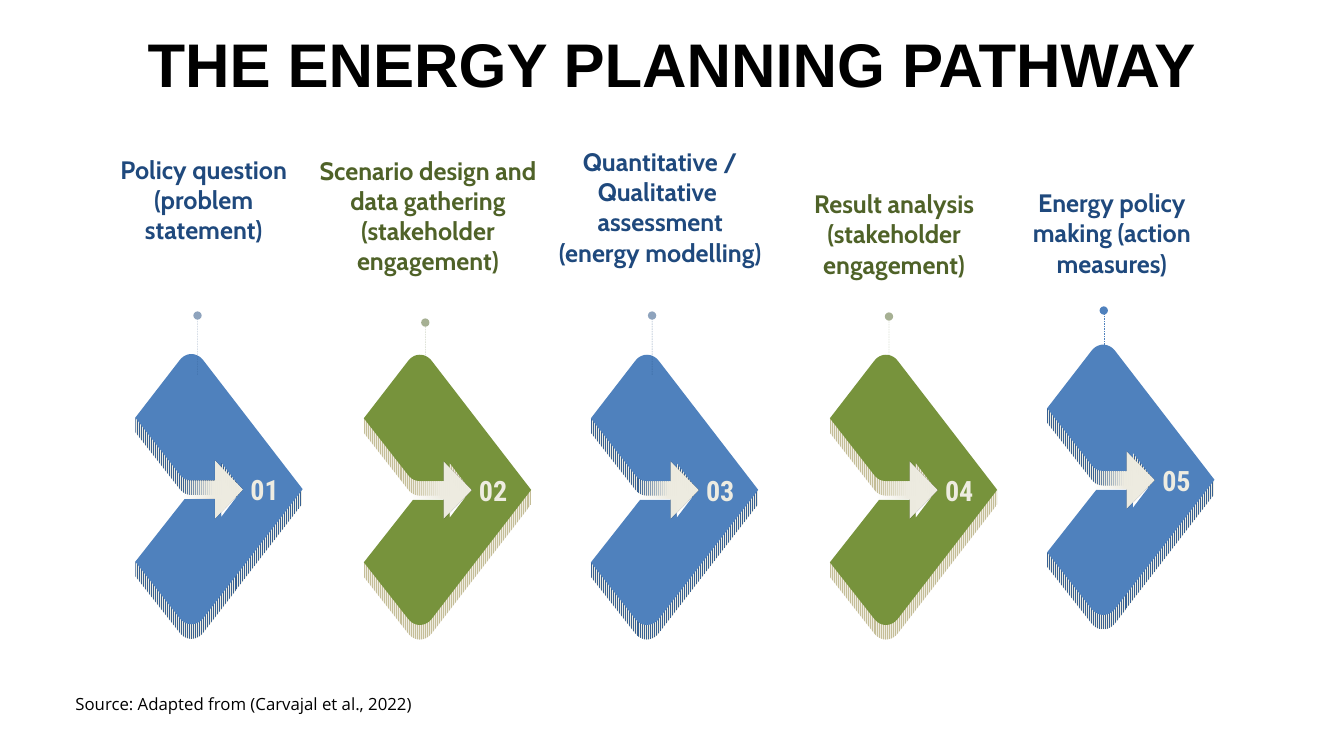
"""Builds the energy planning pathway slide: five numbered chevrons with labels."""
from copy import deepcopy
from dataclasses import dataclass

from lxml import etree
from pptx import Presentation
from pptx.dml import color as dml
from pptx.enum import dml as styles, shapes, text
from pptx.oxml import ns
from pptx.slide import Slide
from pptx.util import Pt

COLOURS = {
    "black": "000000",
    "cream": "EEECE1",
    "blue": "4F81BD",
    "blue side": "376092",
    "navy": "1F497D",
    "green": "77933C",
    "green side": "C4BD97",
    "olive": "4F6228",
}
DEPTH = 10.4
CURVE_STEPS = 8
Segment = tuple[float, ...]
Box = tuple[float, float, float, float]


@dataclass(frozen=True)
class Palette:
    face: str
    side: str
    label: str


@dataclass(frozen=True)
class Leader:
    x: float
    start: float
    end: float
    colour: str
    opacity: int = 50


@dataclass(frozen=True)
class Step:
    label: str
    left: float
    top: float
    label_box: Box
    palette: Palette
    leader: Leader


BLUE = Palette("blue", "blue side", "navy")
GREEN = Palette("green", "green side", "olive")
STEPS = [
    Step("Policy question (problem statement)", 96.7, 252.9,
         (81.4, 110.2, 128.2, 27.4), BLUE, Leader(141.1, 267.8, 225.4, "navy")),
    Step("Scenario design and data gathering (stakeholder engagement)", 259.9, 253.4,
         (219.6, 110.6, 172.1, 27.4), GREEN, Leader(303.8, 255.6, 230.4, "olive")),
    Step("Quantitative / Qualitative  assessment (energy modelling)", 422.1, 253.4,
         (396, 104.4, 151.2, 28.8), BLUE, Leader(465.8, 267.8, 225.4, "navy")),
    Step("Result analysis (stakeholder engagement)", 592.8, 253.4,
         (554.4, 134.6, 168.5, 24.5), GREEN, Leader(635, 255.6, 226.1, "olive")),
    Step("Energy policy making (action measures)", 748, 246.2,
         (725.8, 133.9, 136.8, 32.4), BLUE, Leader(788.4, 264.2, 221.8, "blue", 100)),
]


def rgb(name: str) -> dml.RGBColor:
    """Return a named colour."""
    return dml.RGBColor.from_string(COLOURS[name])


def chevron(depth: float) -> list[Segment]:
    """Return the chevron outline, with upright edges when it has depth."""
    tip: list[Segment] = [(119.5, 96.5)]
    lower: list[Segment] = [(0, 148.3)]
    upper: list[Segment] = [(0, 45.4)]
    if depth:
        tip = [(112, 96.5 - depth), (119.5, 96.5 - depth), *tip]
        lower += [(0, 148.3 - depth), (8, 148.3 - depth)]
        upper += [(0, 45.4 - depth), (8, 45.4 - depth)]
    return [
        (40, 0), (43.2, 0, 46.4, 1.6, 48.6, 4.5),
        *tip,
        (48.6, 188.5), (46.4, 191.4, 43.2, 193, 40, 193),
        (36.8, 193, 33.8, 191.4, 31.6, 188.5),
        *lower,
        (35.1, 103.7), (61.2, 103.7), (61.2, 116.6), (76.3, 96.8),
        (61.2, 77.2), (61.2, 90.2), (40, 90.2),
        (36.8, 90.2, 33.8, 88.8, 31.6, 85.8),
        *upper,
        (31.6, 4.5), (33.8, 1.6, 36.8, 0, 40, 0),
    ]


def flatten(outline: list[Segment]) -> list[tuple[float, float]]:
    """Turn lines and cubic curves into a run of points."""
    points = [(outline[0][0], outline[0][1])]
    for segment in outline[1:]:
        if len(segment) == 2:
            points.append((segment[0], segment[1]))
            continue
        xs, ys = ((points[-1][axis], *segment[axis::2]) for axis in (0, 1))
        for count in range(1, CURVE_STEPS + 1):
            t = count / CURVE_STEPS
            weights = ((1 - t) ** 3, 3 * t * (1 - t) ** 2, 3 * t * t * (1 - t), t ** 3)
            points.append((sum(w * x for w, x in zip(weights, xs)),
                           sum(w * y for w, y in zip(weights, ys))))
    return points


def add_chevron(slide: Slide, left: float, top: float, depth: float = 0):
    """Draw an unlined chevron and return it."""
    points = [(Pt(left + x), Pt(top + depth + y)) for x, y in flatten(chevron(depth))]
    builder = slide.shapes.build_freeform(*points[0], scale=1.0)
    builder.add_line_segments(points[1:], close=True)
    body = builder.convert_to_shape()
    body.shadow.inherit = False
    body.line.fill.background()
    return body


def write(frame, words: str, size: float, font: str, colour: str, bold: bool = True,
          centred: bool = True) -> None:
    """Write one run into the first paragraph of a frame."""
    frame.word_wrap = True
    paragraph = frame.paragraphs[0]
    paragraph.alignment = text.PP_ALIGN.CENTER if centred else text.PP_ALIGN.LEFT
    run = paragraph.add_run()
    run.text = words
    run.font.size, run.font.name, run.font.bold = Pt(size), font, bold
    run.font.color.rgb = rgb(colour)


def add_text(slide: Slide, box: Box, words: str, size: float, font: str, colour: str):
    """Add a centred bold text box without insets and return its frame."""
    frame = slide.shapes.add_textbox(*map(Pt, box)).text_frame
    frame.margin_left = frame.margin_right = frame.margin_top = frame.margin_bottom = 0
    write(frame, words, size, font, colour)
    return frame


def add_arrow(slide: Slide, left: float, top: float) -> None:
    """Draw the cream arrow that fades out towards its tail."""
    arrow = slide.shapes.add_shape(shapes.MSO_SHAPE.RIGHT_ARROW, Pt(left), Pt(top), Pt(42.5), Pt(41))
    arrow.adjustments[0], arrow.adjustments[1] = 0.309, 0.486
    arrow.shadow.inherit = False
    arrow.line.fill.background()
    arrow.fill.gradient()
    arrow.fill.gradient_angle = 180
    for stop in arrow.fill.gradient_stops:
        stop.color.rgb = rgb("cream")
    first, last = arrow._element.spPr.iter(ns.qn("a:gs"))
    middle = deepcopy(first)
    middle.set("pos", "50000")
    first.addnext(middle)
    etree.SubElement(last[0], ns.qn("a:alpha"), val="0")


def add_leader(slide: Slide, leader: Leader) -> None:
    """Draw a thin dashed line that ends in a dot."""
    stem = slide.shapes.add_connector(shapes.MSO_CONNECTOR.STRAIGHT, Pt(leader.x), Pt(leader.start),
                                      Pt(leader.x), Pt(leader.end))
    stem.line.width = Pt(0.25)
    stem.line.color.rgb = rgb(leader.colour)
    stem.line.dash_style = styles.MSO_LINE.DASH
    properties = stem._element.spPr
    if leader.opacity < 100:
        tint = next(properties.iter(ns.qn("a:srgbClr")))
        etree.SubElement(tint, ns.qn("a:alpha"), val=str(leader.opacity * 1000))
    etree.SubElement(properties.find(ns.qn("a:ln")), ns.qn("a:tailEnd"), type="oval")
    etree.SubElement(properties, ns.qn("a:effectLst"))


def add_step(slide: Slide, number: int, step: Step) -> None:
    """Draw one chevron with its side, number, arrow and label."""
    side = add_chevron(slide, step.left, step.top, DEPTH)
    side.fill.patterned()
    side.fill.pattern = styles.MSO_PATTERN.NARROW_VERTICAL
    side.fill.fore_color.rgb = rgb(step.palette.side)
    side.fill.back_color.rgb = rgb("cream")
    face = add_chevron(slide, step.left, step.top)
    face.fill.solid()
    face.fill.fore_color.rgb = rgb(step.palette.face)
    digits = add_text(slide, (step.left + 71.1, step.top + 69.6, 42.5, 54.7), f"{number:02}",
                      20, "Roboto Condensed", "cream")
    digits.vertical_anchor = text.MSO_ANCHOR.MIDDLE
    digits.paragraphs[0].space_after = Pt(3)
    add_arrow(slide, step.left + 34.2, step.top + 76.3)
    add_text(slide, step.label_box, step.label, 18, "Cabin", step.palette.label)


def main() -> None:
    """Build and save the slide."""
    deck = Presentation()
    deck.slide_width, deck.slide_height = Pt(960), Pt(540)
    slide = deck.slides.add_slide(deck.slide_layouts[5])
    title = slide.shapes.title
    title.left, title.top, title.width, title.height = map(Pt, (95, 10.8, 770.4, 46))
    heading = title.text_frame
    heading.auto_size = text.MSO_AUTO_SIZE.NONE
    heading.vertical_anchor = text.MSO_ANCHOR.TOP
    heading.margin_left = heading.margin_right = heading.margin_bottom = 0
    heading.margin_top = Pt(8)
    write(heading, "THE ENERGY PLANNING PATHWAY", 44, "Arial", "black")
    for number, step in enumerate(STEPS, 1):
        add_step(slide, number, step)
    for step in STEPS:
        add_leader(slide, step.leader)
    source = slide.shapes.add_textbox(*map(Pt, (46.8, 491.8, 480.2, 21.6))).text_frame
    write(source, "Source: Adapted from (Carvajal et al., 2022)", 12, "Open Sans", "black",
          bold=False, centred=False)
    deck.save("out.pptx")


if __name__ == "__main__":
    main()
